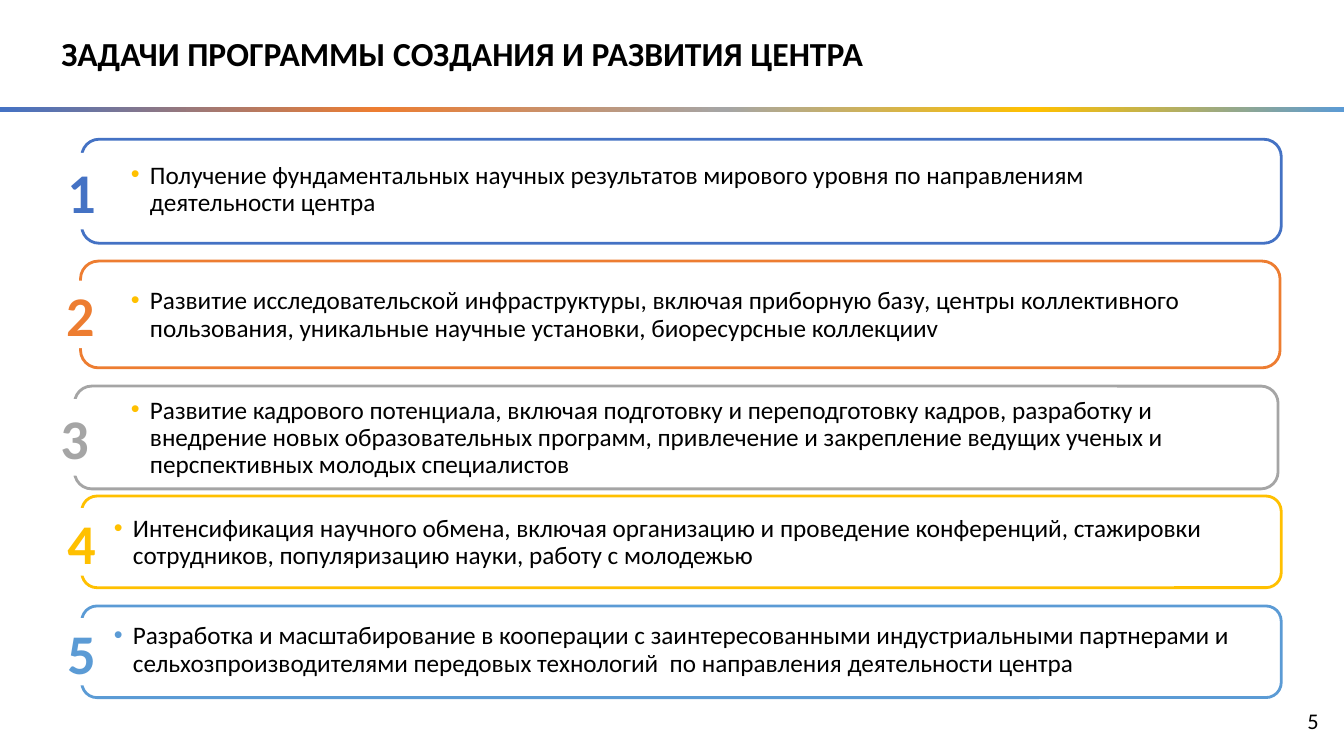
from dataclasses import dataclass

from lxml import etree
from pptx import Presentation
from pptx.dml.color import RGBColor
from pptx.enum import shapes, text
from pptx.oxml import ns
from pptx.util import Cm, Pt


@dataclass(frozen=True)
class Theme:
    font: str = "Calibri"
    ink: str = "000000"
    paper: str = "FFFFFF"
    blue: str = "4472C4"
    orange: str = "ED7D31"
    gray: str = "A5A5A5"
    gold: str = "FFC000"
    sky: str = "5B9BD5"
    title: float = 24
    number: float = 40
    body: float = 18
    page: float = 16
    leading: float = 19.5
    outline: float = 2


@dataclass(frozen=True)
class Box:
    left: float
    top: float
    width: float
    height: float

    def emu(self) -> tuple:
        return Cm(self.left), Cm(self.top), Cm(self.width), Cm(self.height)


@dataclass(frozen=True)
class Task:
    wording: str
    color: str
    bullet: str
    frame: Box
    badge_height: float
    body: Box


T = Theme()
BADGE_WIDTH = 1.3
BADGE_OVERHANG = 0.61
BULLET_INDENT = 0.48
RAINBOW = [(0, T.blue), (28, T.orange), (54, T.gray), (77, T.gold), (100, T.sky)]

TASKS = [
    Task("Получение фундаментальных научных результатов мирового уровня "
         "по направлениям деятельности центра",
         T.blue, T.gold, Box(2.06, 3.51, 30.23, 2.62), 1.93,
         Box(3.05, 3.89, 27.38, 1.75)),
    Task("Развитие исследовательской инфраструктуры, включая приборную базу, "
         "центры коллективного пользования, уникальные научные установки, "
         "биоресурсные коллекцииv",
         T.orange, T.gold, Box(2.03, 6.58, 30.23, 2.69), 1.7,
         Box(3.05, 7.06, 28.5, 1.75)),
    Task("Развитие кадрового потенциала, включая подготовку и переподготовку "
         "кадров, разработку и внедрение новых образовательных программ, "
         "привлечение и закрепление ведущих ученых и перспективных молодых "
         "специалистов",
         T.gray, T.gold, Box(1.88, 9.73, 30.33, 2.59), 1.93,
         Box(3.05, 10.16, 28.5, 1.75)),
    Task("Интенсификация научного обмена, включая организацию и проведение "
         "конференций, стажировки сотрудников, популяризацию науки, работу "
         "с молодежью",
         T.gold, T.gold, Box(2.06, 12.5, 30.23, 2.31), 1.7,
         Box(2.62, 12.8, 28.5, 1.75)),
    Task("Разработка и масштабирование в кооперации с заинтересованными "
         "индустриальными партнерами и сельхозпроизводителями передовых "
         "технологий  по направления деятельности центра",
         T.sky, T.sky, Box(2.06, 15.27, 30.23, 2.31), 1.7,
         Box(2.62, 15.5, 28.98, 1.75)),
]


def apply(obj, values: dict) -> None:
    for name, value in values.items():
        setattr(obj, name, value)


def write(sp, wording: str, size: float, color: str, bold: bool = False,
          frame: dict = {}, para: dict = {}):
    tf = sp.text_frame
    apply(tf, {"word_wrap": True, "vertical_anchor": text.MSO_ANCHOR.MIDDLE, **frame})
    p = tf.paragraphs[0]
    apply(p, {"alignment": text.PP_ALIGN.LEFT, **para})
    r = p.add_run()
    r.text = wording
    apply(r.font, {"name": T.font, "size": Pt(size), "bold": bold})
    r.font.color.rgb = RGBColor.from_string(color)
    return p


def add_bullet(p, color: str) -> None:
    pPr = p._p.get_or_add_pPr()
    pPr.set("marL", str(Cm(BULLET_INDENT)))
    pPr.set("indent", str(-Cm(BULLET_INDENT)))
    clr = etree.SubElement(pPr, ns.qn("a:buClr"))
    etree.SubElement(clr, ns.qn("a:srgbClr"), val=color)
    etree.SubElement(pPr, ns.qn("a:buFont"), typeface="Arial")
    etree.SubElement(pPr, ns.qn("a:buChar"), char="•")


def add_rainbow(s) -> None:
    sp = s.shapes.add_shape(shapes.MSO_SHAPE.RECTANGLE, *Box(0, 2.69, 33.87, 0.13).emu())
    sp.shadow.inherit = False
    sp.line.fill.background()
    sp.fill.gradient()
    sp.fill.gradient_angle = 0
    stops = sp._element.spPr.find(".//" + ns.qn("a:gsLst"))
    for old in list(stops):
        stops.remove(old)
    for percent, color in RAINBOW:
        gs = etree.SubElement(stops, ns.qn("a:gs"), pos=str(percent * 1000))
        etree.SubElement(gs, ns.qn("a:srgbClr"), val=color)


def add_task(s, number: int, task: Task) -> None:
    group = s.shapes.add_group_shape().shapes
    frame = task.frame

    outline = group.add_shape(shapes.MSO_SHAPE.ROUNDED_RECTANGLE, *frame.emu())
    outline.shadow.inherit = False
    outline.fill.background()
    outline.line.color.rgb = RGBColor.from_string(task.color)
    outline.line.width = Pt(T.outline)

    badge_box = Box(frame.left - BADGE_OVERHANG,
                    frame.top + (frame.height - task.badge_height) / 2,
                    BADGE_WIDTH, task.badge_height)
    badge = group.add_shape(shapes.MSO_SHAPE.RECTANGLE, *badge_box.emu())
    badge.shadow.inherit = False
    badge.fill.solid()
    badge.fill.fore_color.rgb = RGBColor.from_string(T.paper)
    badge.line.fill.background()
    write(badge, str(number), T.number, task.color, True,
          {"word_wrap": False, "auto_size": text.MSO_AUTO_SIZE.SHAPE_TO_FIT_TEXT,
           "margin_top": 0, "margin_bottom": 0})

    body = group.add_textbox(*task.body.emu())
    p = write(body, task.wording, T.body, T.ink,
              para={"line_spacing": Pt(T.leading)})
    add_bullet(p, task.bullet)


def main() -> None:
    prs = Presentation()
    apply(prs, {"slide_width": Cm(33.87), "slide_height": Cm(19.05)})
    s = prs.slides.add_slide(prs.slide_layouts[6])

    title = s.shapes.add_textbox(*Box(1.3, 0, 30.15, 2.82).emu())
    write(title, "ЗАДАЧИ ПРОГРАММЫ СОЗДАНИЯ И РАЗВИТИЯ ЦЕНТРА", T.title, T.ink,
          True, para={"line_spacing": 0.9})
    page = s.shapes.add_textbox(*Box(25.86, 17.65, 7.62, 1.02).emu())
    write(page, "5", T.page, T.ink, para={"alignment": text.PP_ALIGN.RIGHT})

    for number, task in enumerate(TASKS, 1):
        add_task(s, number, task)
    add_rainbow(s)
    prs.save("out.pptx")


if __name__ == "__main__":
    main()
